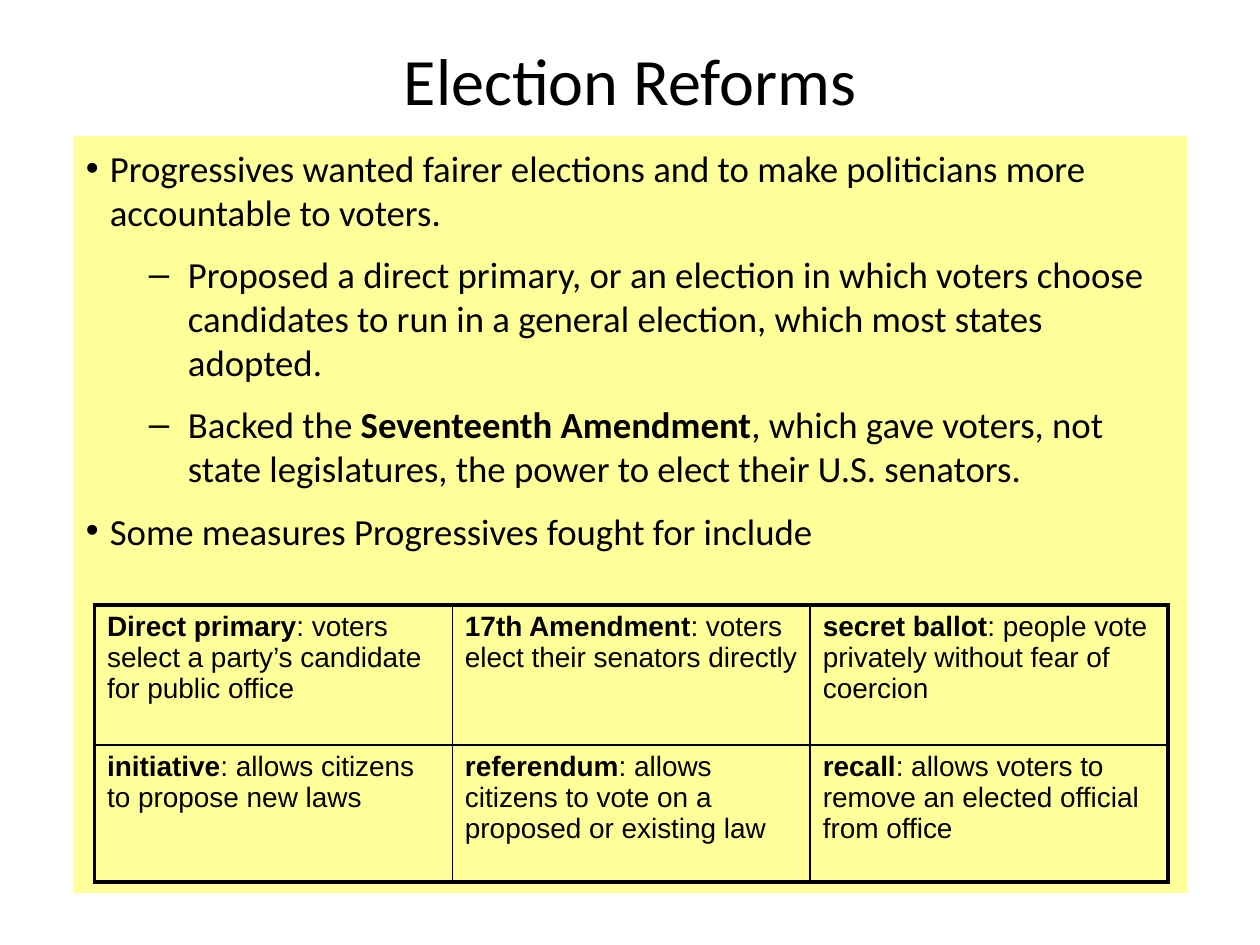
"""Build the Election Reforms slide."""
from dataclasses import dataclass

from lxml import etree
from pptx import Presentation
from pptx.dml.color import RGBColor
from pptx.enum.shapes import MSO_SHAPE
from pptx.enum.text import MSO_ANCHOR, PP_ALIGN
from pptx.oxml.ns import qn
from pptx.util import Pt

RECT = MSO_SHAPE.RECTANGLE
TOP = MSO_ANCHOR.TOP
LEFT, CENTER = PP_ALIGN.LEFT, PP_ALIGN.CENTER


@dataclass(frozen=True)
class Theme:
    ink: RGBColor = RGBColor(0, 0, 0)
    panel: RGBColor = RGBColor(0xFF, 0xFF, 0x99)
    main: str = "Calibri"
    grid: str = "Arial"
    title: float = 37.8
    body: float = 21
    cell: float = 16
    lead: float = 25.1
    gap: float = 10.5
    thick: float = 2.25
    thin: float = 1


@dataclass(frozen=True)
class Run:
    text: str
    bold: bool = False


@dataclass(frozen=True)
class Level:
    mark: str
    left: float
    hang: float


@dataclass(frozen=True)
class Point:
    level: int
    runs: tuple[Run, ...]


@dataclass(frozen=True)
class Term:
    name: str
    text: str


THEME = Theme()
LEVELS = (Level("•", 13.68, 13.68), Level("–", 58.32, 22.32))
POINTS = (
    Point(0, (Run("Progressives wanted fairer elections and to make politicians "
                  "more accountable to voters."),)),
    Point(1, (Run("Proposed a direct primary, or an election in which voters choose "
                  "candidates to run in a general election, which most states adopted."),)),
    Point(1, (Run("Backed the "), Run("Seventeenth Amendment", True),
              Run(", which gave voters, not state legislatures, the power to elect "
                  "their U.S. senators."))),
    Point(0, (Run("Some measures Progressives fought for include"),)),
)
TERMS = (
    (Term("Direct primary", ": voters select a party’s candidate for public office"),
     Term("17th Amendment", ": voters elect their senators directly"),
     Term("secret ballot", ": people vote privately without fear of coercion")),
    (Term("initiative", ": allows citizens to propose new laws"),
     Term("referendum", ": allows citizens to vote on a proposed or existing law"),
     Term("recall", ": allows voters to remove an elected official from office")),
)
WIDTH = 204.5
HEIGHTS = (80, 78.5)


def add_run(para, run: Run, face: str, size: float) -> None:
    """Add one styled run to a paragraph."""
    part = para.add_run()
    part.text = run.text
    font = part.font
    font.name, font.size, font.bold = face, Pt(size), run.bold
    font.color.rgb = THEME.ink


def set_mark(para, level: Level) -> None:
    """Give a paragraph its bullet and hanging indent."""
    props = para._p.get_or_add_pPr()
    props.set("marL", str(Pt(level.left)))
    props.set("indent", str(-Pt(level.hang)))
    etree.SubElement(props, qn("a:buFont"), typeface="Arial")
    etree.SubElement(props, qn("a:buChar"), char=level.mark)


def add_title(slide) -> None:
    """Draw the centred heading."""
    frame = slide.shapes.add_textbox(Pt(42), Pt(18), Pt(636), Pt(46)).text_frame
    frame.word_wrap = True
    frame.vertical_anchor = TOP
    frame.margin_top = Pt(4.5)
    para = frame.paragraphs[0]
    para.alignment = CENTER
    add_run(para, Run("Election Reforms"), THEME.main, THEME.title)


def add_body(slide) -> None:
    """Draw the panel with its bullet points."""
    panel = slide.shapes.add_shape(RECT, Pt(42), Pt(78), Pt(636), Pt(432))
    panel.shadow.inherit = False
    panel.fill.solid()
    panel.fill.fore_color.rgb = THEME.panel
    panel.line.color.rgb = THEME.panel
    panel.line.width = Pt(0.75)
    frame = panel.text_frame
    frame.word_wrap = True
    frame.vertical_anchor = TOP
    frame.margin_top = Pt(5.5)
    for rank, point in enumerate(POINTS):
        para = frame.add_paragraph() if rank else frame.paragraphs[0]
        para.alignment = LEFT
        para.level = point.level
        para.line_spacing = Pt(THEME.lead)
        para.space_before = Pt(THEME.gap if rank else 0)
        set_mark(para, LEVELS[point.level])
        for run in point.runs:
            add_run(para, run, THEME.main, THEME.body)


def set_edges(cell, edges: dict[str, bool]) -> None:
    """Draw cell borders, thick where the edge is an outer one."""
    props = cell._tc.get_or_add_tcPr()
    for side, outer in edges.items():
        width = Pt(THEME.thick if outer else THEME.thin)
        line = etree.SubElement(props, qn(f"a:ln{side}"), w=str(width))
        fill = etree.SubElement(line, qn("a:solidFill"))
        etree.SubElement(fill, qn("a:srgbClr"), val=str(THEME.ink))


def add_terms(slide) -> None:
    """Draw the table of reform measures."""
    rows, cols = len(TERMS), len(TERMS[0])
    table = slide.shapes.add_table(rows, cols, Pt(54), Pt(345.6),
                                   Pt(WIDTH * cols), Pt(sum(HEIGHTS))).table
    table.first_row = table.horz_banding = False
    for col in table.columns:
        col.width = Pt(WIDTH)
    for y, line in enumerate(TERMS):
        table.rows[y].height = Pt(HEIGHTS[y])
        for x, term in enumerate(line):
            cell = table.cell(y, x)
            set_edges(cell, {"L": x == 0, "R": x == cols - 1,
                             "T": y == 0, "B": y == rows - 1})
            cell.fill.background()
            cell.margin_right = Pt(6)
            para = cell.text_frame.paragraphs[0]
            for run in (Run(term.name, True), Run(term.text)):
                add_run(para, run, THEME.grid, THEME.cell)


def main() -> None:
    """Build and save the deck."""
    deck = Presentation()
    deck.slide_width, deck.slide_height = Pt(720), Pt(540)
    slide = deck.slides.add_slide(deck.slide_layouts[6])
    add_title(slide)
    add_body(slide)
    add_terms(slide)
    deck.save("out.pptx")


if __name__ == "__main__":
    main()
